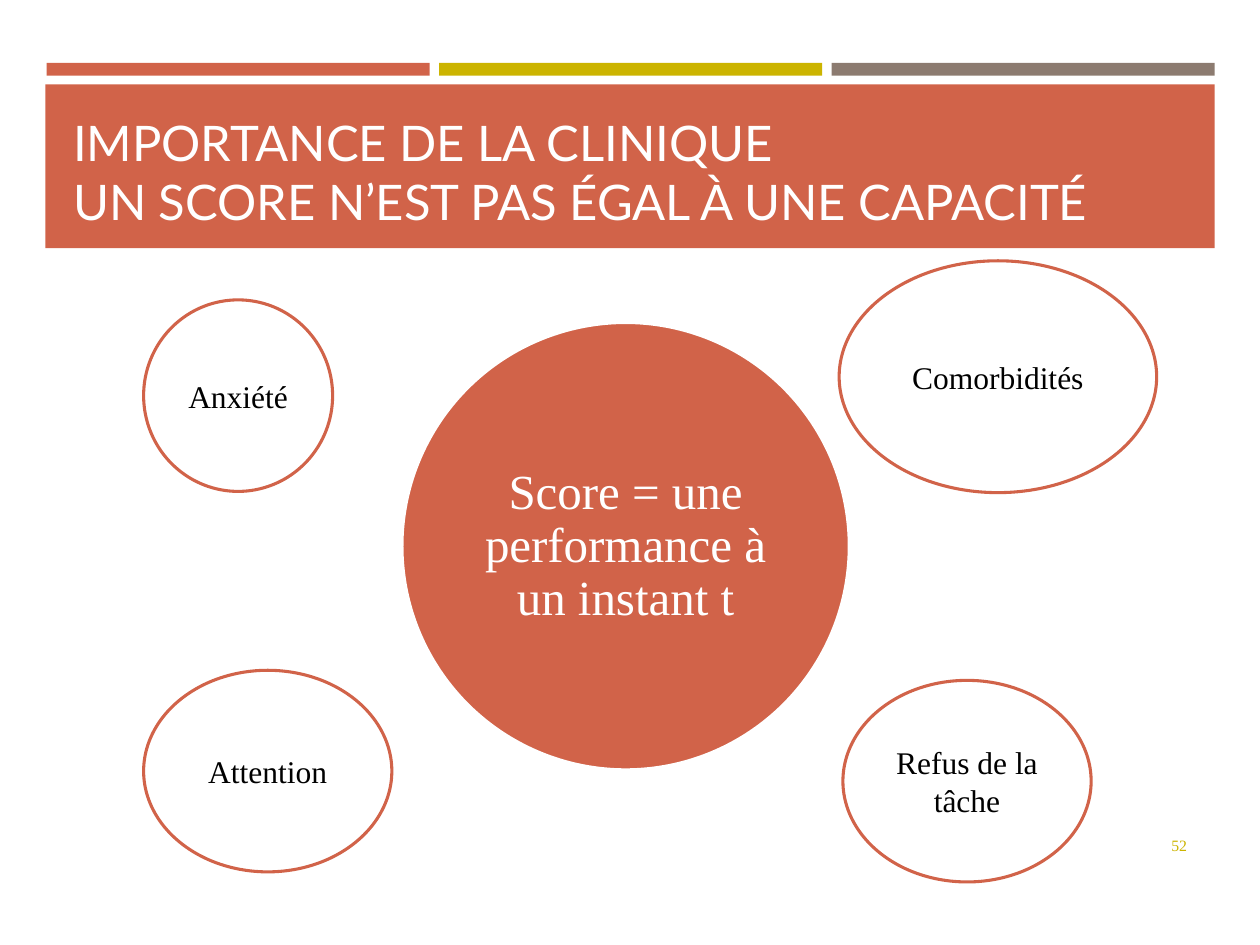
import pptx
import pptx.dml.color
import pptx.enum.shapes
import pptx.enum.text
import pptx.util

Inches = pptx.util.Inches
SHAPES = pptx.enum.shapes.MSO_SHAPE
ALIGN = pptx.enum.text.PP_ALIGN
ANCHOR = pptx.enum.text.MSO_ANCHOR

RUST, GOLD, TAUPE = "D16349", "CCB400", "8C7B70"
WHITE, BLACK = "FFFFFF", "000000"
SERIF, SANS = "Times New Roman", "Lato"

TITLE = "IMPORTANCE DE LA CLINIQUE\vUN SCORE N’EST PAS ÉGAL À UNE CAPACITÉ"
CENTRE_TEXT = "Score = une performance à un instant t"
PAGE_NUMBER = "52"
FACTORS = [
    ("Anxiété", (1.14, 2.38, 1.5, 1.52)),
    ("Attention", (1.14, 5.32, 1.97, 1.6)),
    ("Refus de la tâche", (6.69, 5.4, 1.97, 1.6)),
    ("Comorbidités", (6.66, 2.07, 2.52, 1.84)),
]

BAR_COLOURS = [RUST, GOLD, TAUPE]
BAR_LEFT, BAR_TOP, BAR_WIDTH, BAR_HEIGHT, BAR_STEP = 0.37, 0.5, 3.04, 0.1, 3.115


def colour(value):
    return pptx.dml.color.RGBColor.from_string(value)


def add_shape(slide, kind, box, fill, line=None):
    shape = slide.shapes.add_shape(kind, *map(Inches, box))
    shape.shadow.inherit = False
    shape.fill.solid()
    shape.fill.fore_color.rgb = colour(fill)
    if line:
        shape.line.color.rgb = colour(line)
        shape.line.width = pptx.util.Pt(1.75)
    else:
        shape.line.fill.background()
    return shape


def write(shape, text, size=18, font=SERIF, text_colour=BLACK, align=ALIGN.CENTER,
          anchor=ANCHOR.MIDDLE, spacing=None, inset=None):
    frame = shape.text_frame
    frame.word_wrap = True
    frame.vertical_anchor = anchor
    if inset is not None:
        frame.margin_left = frame.margin_right = Inches(inset)
        frame.margin_top = frame.margin_bottom = Inches(inset)
    paragraph = frame.paragraphs[0]
    paragraph.text = text
    paragraph.alignment = align
    paragraph.line_spacing = spacing
    for run in paragraph.runs:
        run.font.size = pptx.util.Pt(size)
        run.font.name = font
        run.font.color.rgb = colour(text_colour)


def add_text(slide, box, text, **text_format):
    write(slide.shapes.add_textbox(*map(Inches, box)), text, **text_format)


def main():
    presentation = pptx.Presentation()
    presentation.slide_width = Inches(10)
    presentation.slide_height = Inches(7.5)
    slide = presentation.slides.add_slide(presentation.slide_layouts[5])

    for index, bar_colour in enumerate(BAR_COLOURS):
        box = (BAR_LEFT + index * BAR_STEP, BAR_TOP, BAR_WIDTH, BAR_HEIGHT)
        add_shape(slide, SHAPES.RECTANGLE, box, bar_colour)
    add_shape(slide, SHAPES.RECTANGLE, (0.36, 0.67, 9.28, 1.3), RUST)

    # The title placeholder moves in front of the band behind it.
    title = slide.shapes.title
    title.left, title.top, title.width, title.height = map(Inches, (0.48, 0.77, 9.05, 1.11))
    write(title, TITLE, size=28, font=SANS, text_colour=WHITE,
          align=ALIGN.LEFT, anchor=ANCHOR.BOTTOM)
    slide.shapes.element.append(title.element)

    add_shape(slide, SHAPES.OVAL, (3.19, 2.56, 3.55, 3.55), RUST, line=WHITE)
    add_text(slide, (3.71, 3.08, 2.51, 2.51), CENTRE_TEXT, size=28,
             text_colour=WHITE, spacing=0.9, inset=0.02)
    add_text(slide, (8.66, 6.51, 0.86, 0.4), PAGE_NUMBER, size=9,
             text_colour=GOLD, align=ALIGN.RIGHT)

    for label, box in FACTORS:
        write(add_shape(slide, SHAPES.OVAL, box, WHITE, line=RUST), label)

    presentation.save("out.pptx")


if __name__ == "__main__":
    main()
